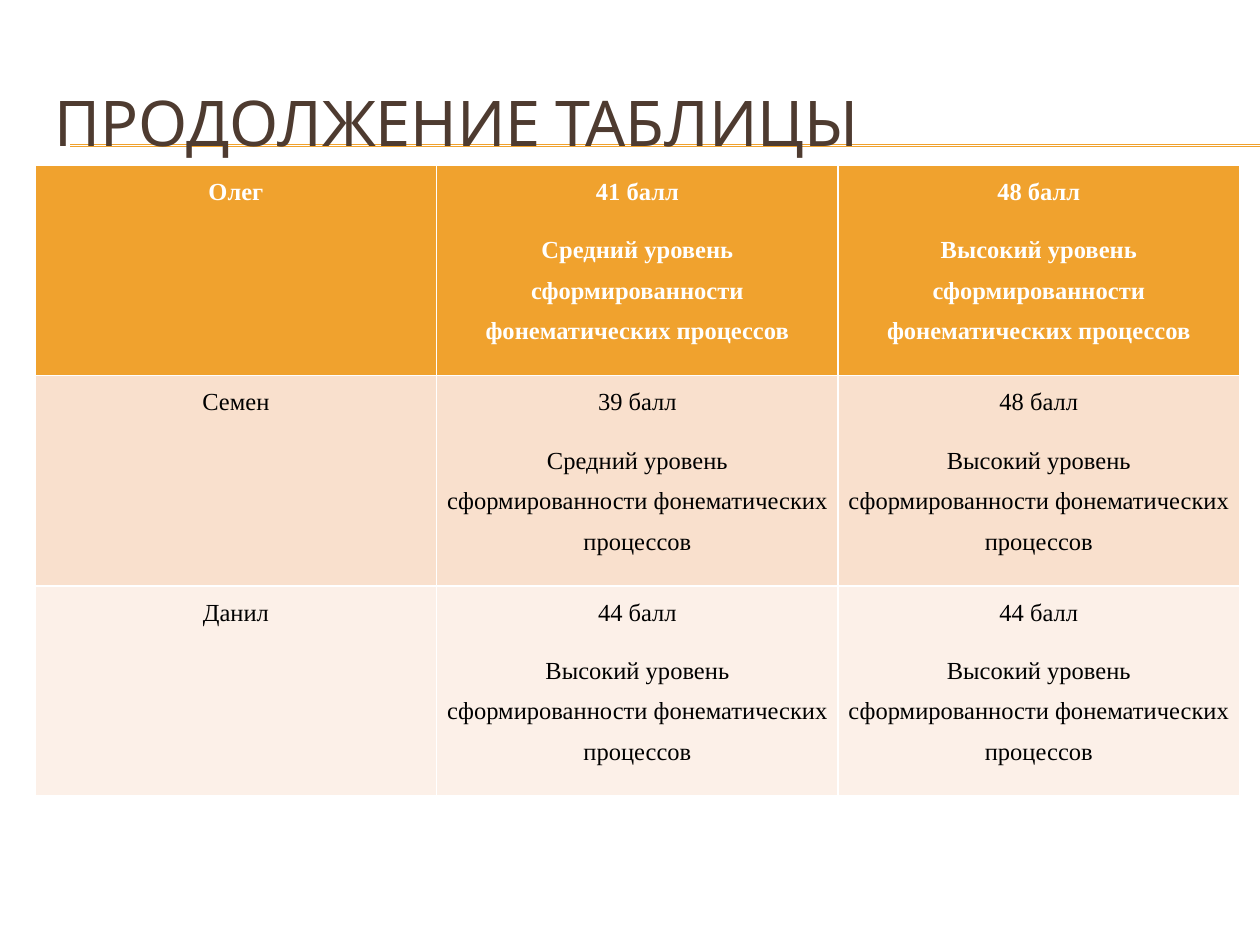
from pptx import Presentation
from pptx.dml.color import RGBColor
from pptx.enum.shapes import MSO_CONNECTOR
from pptx.enum.text import MSO_ANCHOR, PP_ALIGN
from pptx.oxml.ns import qn
from pptx.util import Cm, Pt
from lxml import etree

LEFT, CENTER = PP_ALIGN.LEFT, PP_ALIGN.CENTER
TOP, MIDDLE = MSO_ANCHOR.TOP, MSO_ANCHOR.MIDDLE
STRAIGHT = MSO_CONNECTOR.STRAIGHT

ORANGE = RGBColor(0xF0, 0xA2, 0x2E)
PEACH = RGBColor(0xF9, 0xE0, 0xCD)
CREAM = RGBColor(0xFC, 0xF0, 0xE8)
BROWN = RGBColor(0x4E, 0x3B, 0x30)
WHITE = RGBColor(0xFF, 0xFF, 0xFF)
BLACK = RGBColor(0x00, 0x00, 0x00)

LEVEL = "{} уровень сформированности фонематических процессов"
MIDDLE_LEVEL = LEVEL.format("Средний")
HIGH_LEVEL = LEVEL.format("Высокий")
ROWS = [
    ("Олег", f"41 балл\n{MIDDLE_LEVEL}", f"48 балл\n{HIGH_LEVEL}"),
    ("Семен", f"39 балл\n{MIDDLE_LEVEL}", f"48 балл\n{HIGH_LEVEL}"),
    ("Данил", f"44 балл\n{HIGH_LEVEL}", f"44 балл\n{HIGH_LEVEL}"),
]
ROW_STYLES = [(ORANGE, WHITE, True), (PEACH, BLACK, False), (CREAM, BLACK, False)]


class SlideBuilder:
    """Draws styled elements on the current slide."""

    title_font = "Cabin"
    body_font = "Times New Roman"

    def __init__(self, slide):
        self.slide = slide

    def format_runs(self, p, name, size, color, bold=False):
        for r in p.runs:
            r.font.name = name
            r.font.size = Pt(size)
            r.font.color.rgb = color
            r.font.bold = bold

    def line(self, x1, x2, y):
        cn = self.slide.shapes.add_connector(STRAIGHT, Cm(x1), Cm(y), Cm(x2), Cm(y))
        cn.line.color.rgb = ORANGE
        cn.line.width = Pt(0.75)
        etree.SubElement(cn.element.spPr, qn("a:effectLst"))

    def title(self, text, left, top, width, height):
        shapes = self.slide.shapes
        sp = shapes.title
        shapes.element.append(sp.element)
        sp.left, sp.top, sp.width, sp.height = Cm(left), Cm(top), Cm(width), Cm(height)
        tf = sp.text_frame
        tf.text = text
        tf.word_wrap = True
        tf.vertical_anchor = MIDDLE
        p = tf.paragraphs[0]
        p.alignment = LEFT
        self.format_runs(p, self.title_font, 36, BROWN)

    def table(self, rows, styles, left, top, width, height):
        frame = self.slide.shapes.add_table(
            len(rows), len(rows[0]), Cm(left), Cm(top), Cm(width), Cm(height)
        )
        for row, texts, style in zip(frame.table.rows, rows, styles):
            for cell, text in zip(row.cells, texts):
                self.cell(cell, text, *style)

    def cell(self, cell, text, fill, color, bold):
        cell.fill.solid()
        cell.fill.fore_color.rgb = fill
        cell.margin_left = cell.margin_right = Cm(0.18)
        cell.margin_top = cell.margin_bottom = 0
        cell.vertical_anchor = TOP
        tf = cell.text_frame
        tf.text = text
        for p in tf.paragraphs:
            p.alignment = CENTER
            p.line_spacing = 1.5
            p.space_after = Pt(10)
            self.format_runs(p, self.body_font, 14, color, bold)


def main():
    prs = Presentation()
    prs.slide_width, prs.slide_height = Cm(25.4), Cm(19.05)
    builder = SlideBuilder(prs.slides.add_slide(prs.slide_layouts[5]))
    for y in (2.92, 2.95):
        builder.line(1.42, 25.4, y)
    builder.title("ПРОДОЛЖЕНИЕ ТАБЛИЦЫ", 0.84, 1.27, 24.13, 2.34)
    builder.table(ROWS, ROW_STYLES, 0.71, 3.33, 24.28, 12.72)
    prs.save("out.pptx")


if __name__ == "__main__":
    main()
